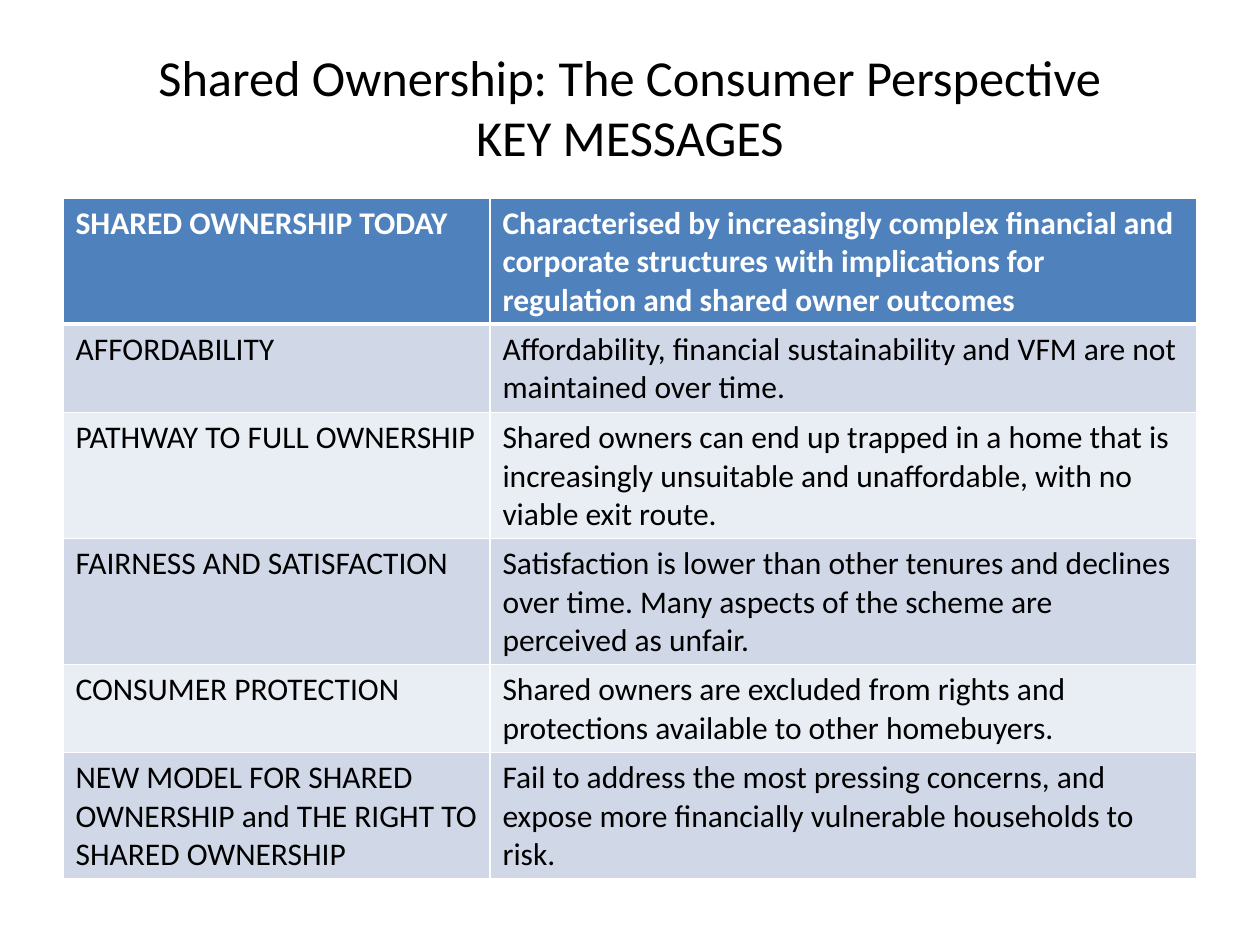
"""Build the key messages slide on shared ownership."""
from typing import NamedTuple

import lxml.etree
import pptx
import pptx.dml.color
import pptx.enum.text
import pptx.oxml.ns
import pptx.util

SCALE = 914400 / 126
FONT = "Calibri"
WHITE, BLACK, BLUE = "FFFFFF", "000000", "4F81BD"
BANDS = ("D0D8E8", "E9EDF4")
COLS = (427, 707)
ROW = 52


class Message(NamedTuple):
    topic: str
    point: str


TITLE = ("Shared Ownership: The Consumer Perspective", "KEY MESSAGES")
ROWS = (
    Message("SHARED OWNERSHIP TODAY",
            "Characterised by increasingly complex financial and corporate structures "
            "with implications for regulation and shared owner outcomes"),
    Message("AFFORDABILITY",
            "Affordability, financial sustainability and VFM are not maintained over time."),
    Message("PATHWAY TO FULL OWNERSHIP",
            "Shared owners can end up trapped in a home that is increasingly unsuitable "
            "and unaffordable, with no viable exit route."),
    Message("FAIRNESS AND SATISFACTION",
            "Satisfaction is lower than other tenures and declines over time. "
            "Many aspects of the scheme are perceived as unfair."),
    Message("CONSUMER PROTECTION",
            "Shared owners are excluded from rights and protections available "
            "to other homebuyers."),
    Message("NEW MODEL FOR SHARED OWNERSHIP and THE RIGHT TO SHARED OWNERSHIP",
            "Fail to address the most pressing concerns, and expose more financially "
            "vulnerable households to risk."),
)


def px(n: int) -> pptx.util.Emu:
    return pptx.util.Emu(round(n * SCALE))


def color(code: str) -> pptx.dml.color.RGBColor:
    return pptx.dml.color.RGBColor.from_string(code)


def add_run(para, text: str, size: float, code: str, bold: bool = False) -> None:
    run = para.add_run()
    run.text = text
    run.font.name = FONT
    run.font.size = pptx.util.Pt(size)
    run.font.bold = bold
    run.font.color.rgb = color(code)


def add_edge(cell, side: str, width: int) -> None:
    tag = pptx.oxml.ns.qn
    props = cell._tc.get_or_add_tcPr()
    line = lxml.etree.SubElement(props, tag(f"a:ln{side}"), w=str(pptx.util.Pt(width)))
    fill = lxml.etree.SubElement(line, tag("a:solidFill"))
    lxml.etree.SubElement(fill, tag("a:srgbClr"), val=WHITE)


def fill_cell(cell, text: str, row: int) -> None:
    head = row == 0
    for side in "LRTB":
        thick = (head and side == "B") or (row == 1 and side == "T")
        add_edge(cell, side, 3 if thick else 1)
    cell.fill.solid()
    cell.fill.fore_color.rgb = color(BLUE if head else BANDS[(row - 1) % 2])
    add_run(cell.text_frame.paragraphs[0], text, 18, WHITE if head else BLACK, head)


def add_title(slide) -> None:
    box = slide.shapes.add_textbox(px(63), px(38), px(1134), px(137))
    frame = box.text_frame
    frame.word_wrap = True
    frame.vertical_anchor = pptx.enum.text.MSO_ANCHOR.MIDDLE
    para = frame.paragraphs[0]
    para.alignment = pptx.enum.text.PP_ALIGN.CENTER
    for i, text in enumerate(TITLE):
        if i:
            para.add_line_break()
        add_run(para, text, 28.8, BLACK)


def add_grid(slide) -> None:
    shape = slide.shapes.add_table(
        len(ROWS), len(COLS), px(63), px(198), px(sum(COLS)), px(ROW * len(ROWS)))
    grid = shape.table
    for col, width in zip(grid.columns, COLS):
        col.width = px(width)
    for i, row in enumerate(ROWS):
        grid.rows[i].height = px(ROW)
        for j, text in enumerate(row):
            fill_cell(grid.cell(i, j), text, i)
    shape.height = px(680)


def main() -> None:
    deck = pptx.Presentation()
    deck.slide_width, deck.slide_height = px(1260), px(945)
    slide = deck.slides.add_slide(deck.slide_layouts[6])
    add_title(slide)
    add_grid(slide)
    deck.save("out.pptx")


if __name__ == "__main__":
    main()
